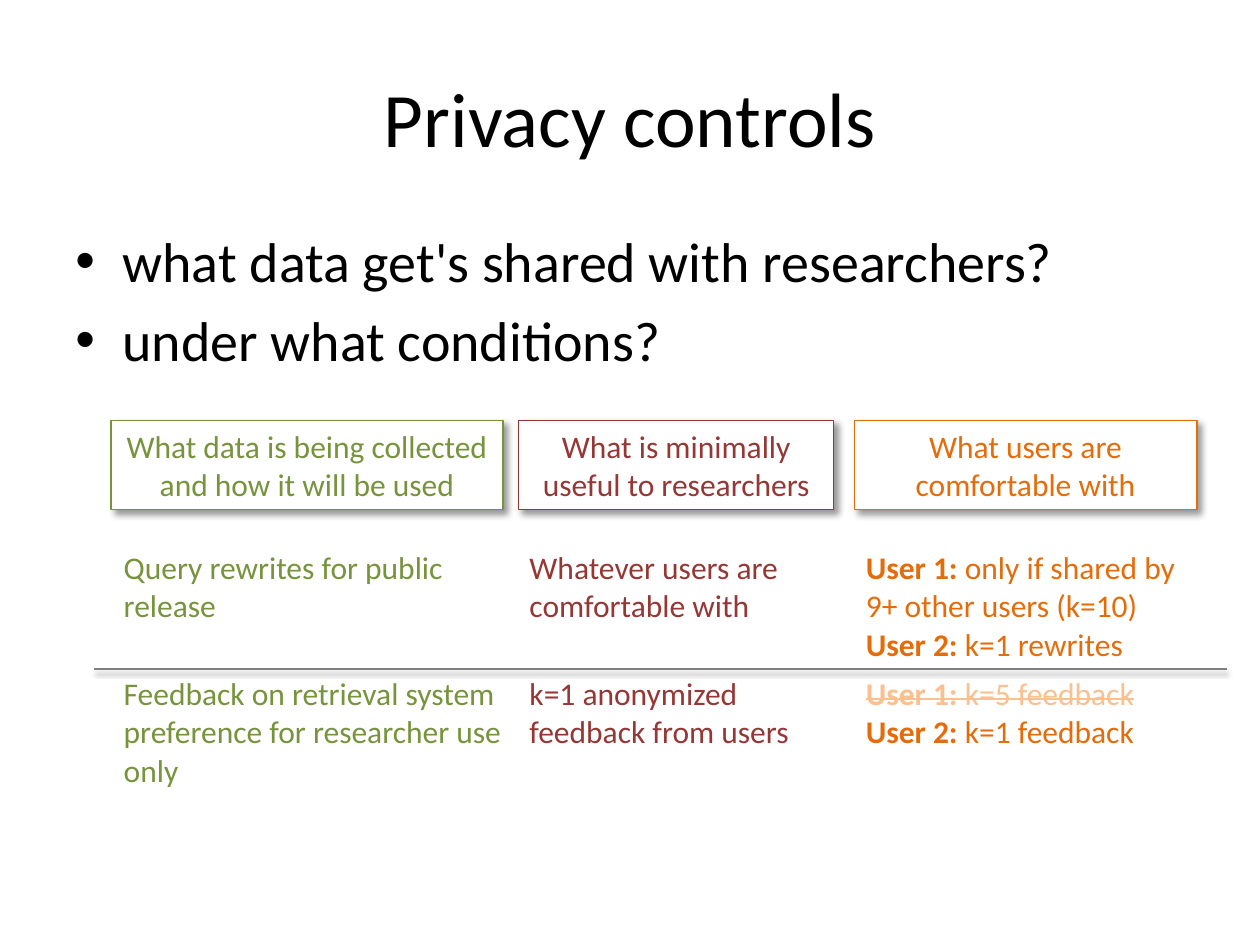
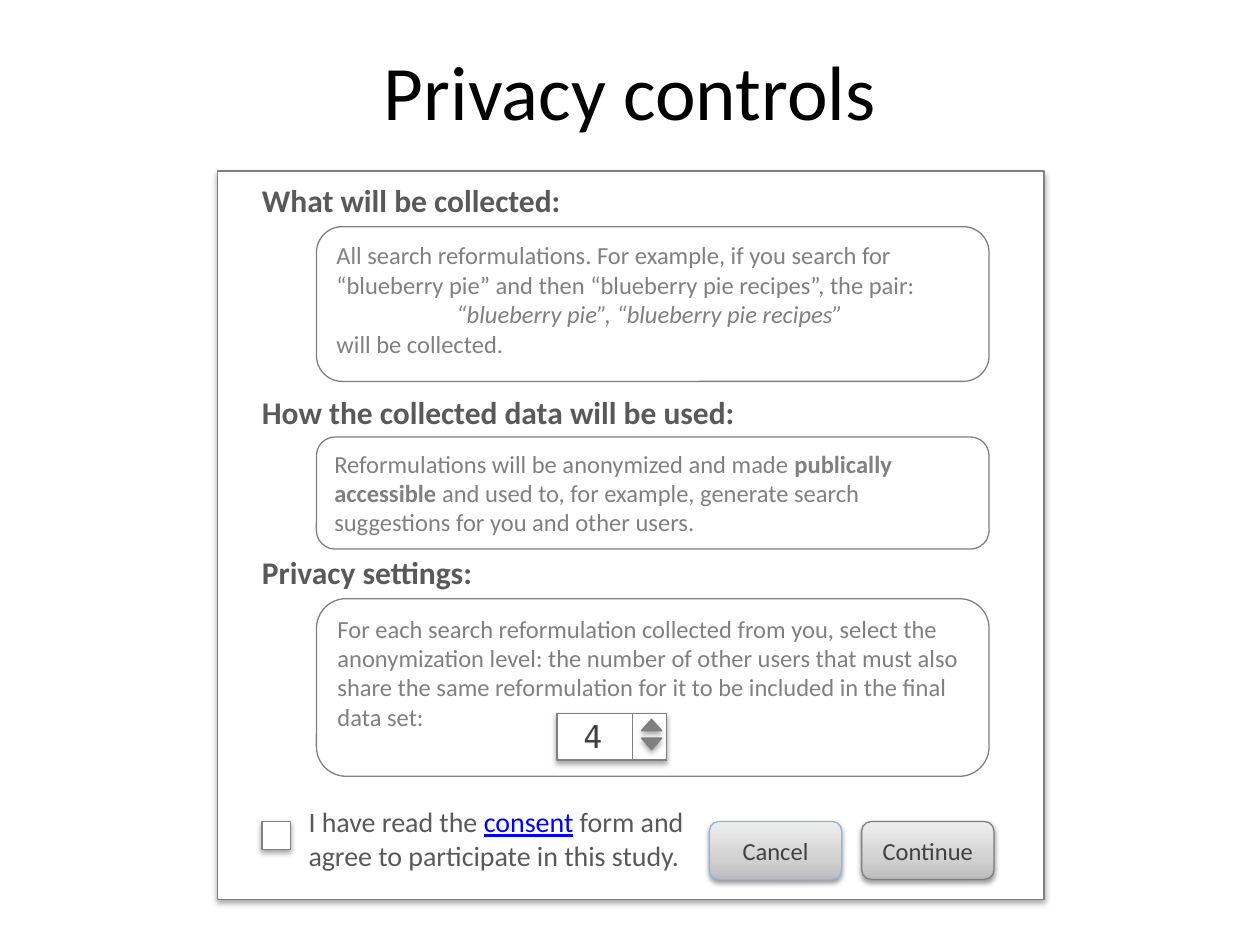
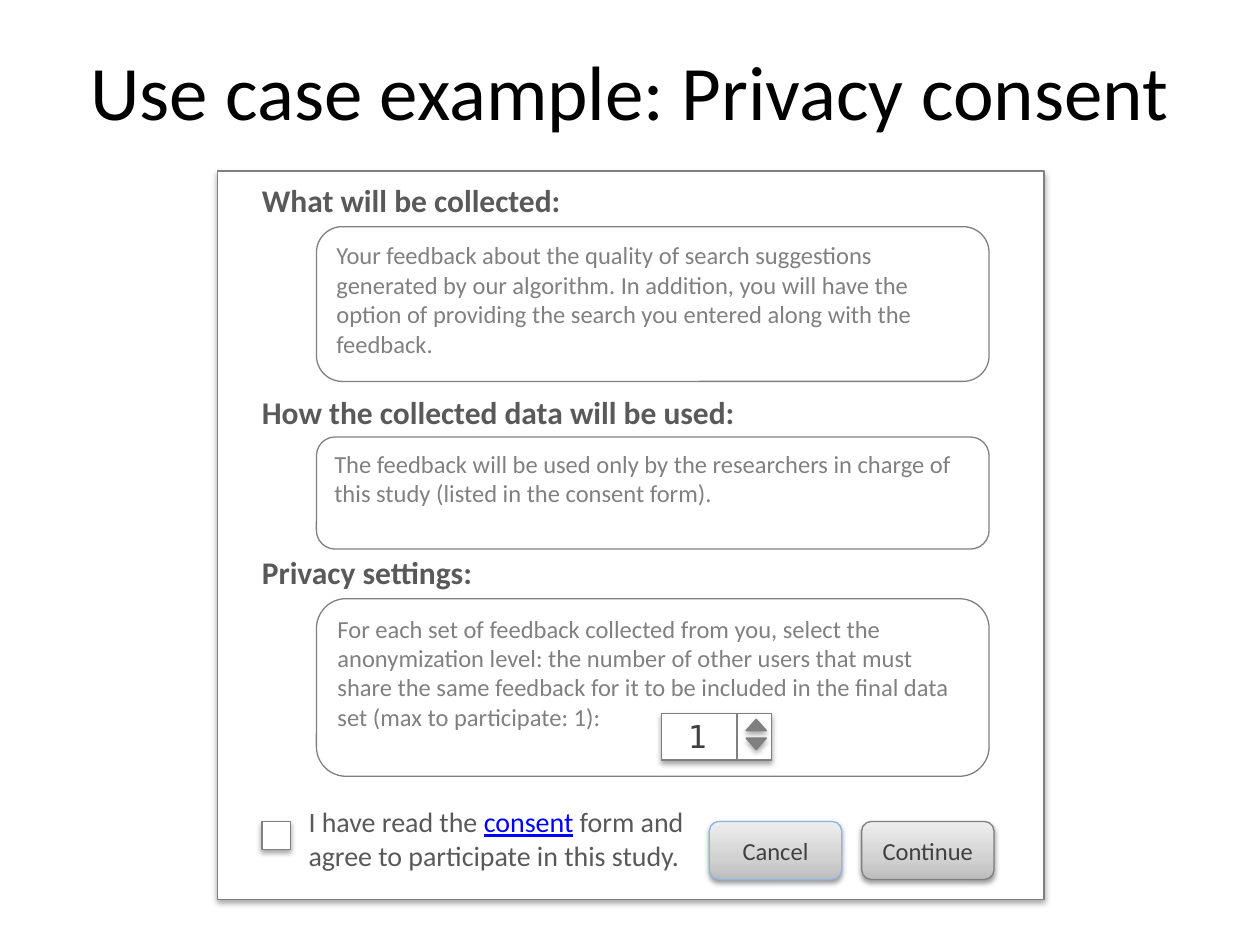
"""Build three slides on privacy controls and consent forms."""
from copy import deepcopy

from lxml.etree import SubElement
from pptx import Presentation
from pptx.dml.color import RGBColor
from pptx.enum.shapes import MSO_CONNECTOR, MSO_SHAPE
from pptx.enum.text import MSO_ANCHOR, PP_ALIGN
from pptx.oxml.ns import qn
from pptx.util import Cm, Pt

BLACK = RGBColor(0x00, 0x00, 0x00)
WHITE = RGBColor(0xFF, 0xFF, 0xFF)
GREEN = RGBColor(0x77, 0x93, 0x3C)
RED = RGBColor(0x95, 0x37, 0x35)
ORANGE = RGBColor(0xE4, 0x6C, 0x0A)
PEACH = RGBColor(0xFA, 0xC0, 0x90)
BLUE = RGBColor(0x00, 0x00, 0xFF)
SKY = RGBColor(0x8E, 0xB4, 0xE3)
INK = RGBColor(0x40, 0x40, 0x40)
DARK = RGBColor(0x59, 0x59, 0x59)
STEEL = RGBColor(0x7F, 0x7F, 0x7F)
GRAY = RGBColor(0x80, 0x80, 0x80)
STOPS = [(0, RGBColor(0xBD, 0xBD, 0xBD)), (0.35, RGBColor(0xD1, 0xD1, 0xD1)),
         (1, RGBColor(0xEE, 0xEE, 0xEE))]

CARD = (40, 4, 3, 45)
SOFT = (35, 3.1, 1.8, 90)
DROP = (38, 3.1, 1.6, 90)

MID = {"align": PP_ALIGN.CENTER}
BOLD = {"bold": True}
TITLE = {"size": Pt(44), "tint": BLACK, **MID}
POINT = {"size": Pt(32), "tint": BLACK}
LABEL = {"size": Pt(18), "tint": DARK, **BOLD}
NOTE = {"size": Pt(14), "tint": GRAY}
PRESS = {"size": Pt(14), "tint": INK, **MID}
COUNT = {"size": Pt(18), "tint": INK, "name": "DejaVu Sans Mono"}
AGREE = {"size": Pt(16), "tint": DARK}


def write(frame, rows, look, anchor=MSO_ANCHOR.TOP):
    frame.word_wrap = True
    frame.vertical_anchor = anchor
    for spot, row in enumerate(rows):
        para = frame.add_paragraph() if spot else frame.paragraphs[0]
        para.alignment = PP_ALIGN.LEFT
        for text, extra in row:
            run = para.add_run()
            run.text = text
            for name, value in {"name": "Calibri", **look, **extra}.items():
                if name == "tint":
                    run.font.color.rgb = value
                elif name == "align":
                    para.alignment = value
                elif name == "strike":
                    run._r.get_or_add_rPr().set("strike", value)
                else:
                    setattr(run.font, name, value)


def draw(page, kind, box, line, shade=None, fill=WHITE):
    left, top, width, height = map(Cm, box)
    if kind is MSO_CONNECTOR.STRAIGHT:
        item = page.shapes.add_connector(kind, left, top, left + width, top + height)
        item.line.width = Pt(1)
    else:
        item = page.shapes.add_shape(kind, left, top, width, height)
        item.fill.solid()
        item.fill.fore_color.rgb = fill
        item.line.width = Pt(0.75)
    item.line.color.rgb = line
    cast = SubElement(item._element.spPr, qn("a:effectLst"))
    if shade:
        alpha, blur, dist, turn = shade
        outer = SubElement(cast, qn("a:outerShdw"), blurRad=str(Pt(blur)),
                           dist=str(Pt(dist)), dir=str(turn * 60000), rotWithShape="0")
        tone = SubElement(outer, qn("a:srgbClr"), val=str(BLACK))
        SubElement(tone, qn("a:alpha"), val=str(alpha * 1000))
    return item


deck = Presentation()
deck.slide_width, deck.slide_height = Cm(25.4), Cm(19.05)
pages = []
for title, anchor in [("Privacy controls", MSO_ANCHOR.MIDDLE),
                      ("Privacy controls", MSO_ANCHOR.TOP),
                      ("Use case example: Privacy consent", MSO_ANCHOR.TOP)]:
    page = deck.slides.add_slide(deck.slide_layouts[6])
    head = page.shapes.add_textbox(Cm(1.27), Cm(0.76), Cm(22.86), Cm(3.18))
    write(head.text_frame, [[(title, {})]], TITLE, anchor)
    pages.append(page)

page = pages[0]
body = page.shapes.add_textbox(Cm(1.27), Cm(4.45), Cm(22.86), Cm(3.66)).text_frame
write(body, [[("what data get's shared with researchers?", {})],
             [("under what conditions?", {})]], POINT)
for para in body.paragraphs:
    para.space_before = Pt(6.4)
    form = para._p.get_or_add_pPr()
    form.set("marL", str(Cm(0.95)))
    form.set("indent", str(Cm(-0.95)))
    SubElement(form, qn("a:buFont"), typeface="Arial")
    SubElement(form, qn("a:buChar"), char="•")

for left, width, tint, text in [
        (17.22, 6.91, ORANGE, "What users are comfortable with"),
        (10.46, 6.35, RED, "What is minimally useful to researchers"),
        (2.24, 7.9, GREEN, "What data is being collected and how it will be used")]:
    card = draw(page, MSO_SHAPE.RECTANGLE, (left, 8.48, width, 1.8), tint, CARD)
    write(card.text_frame, [[(text, {})]], {"size": Pt(18), "tint": tint, **MID})

GONE = {"tint": PEACH, "strike": "sngStrike"}
cells = [
    [[[("Query rewrites for public release", {})]],
     [[("Whatever users are comfortable with", {})]],
     [[("User 1: ", BOLD), ("only if shared by 9+ other users (k=10)", {})],
      [("User 2: ", BOLD), ("k=1 rewrites", {})]]],
    [[[("Feedback on retrieval system preference for researcher use only", {})]],
     [[("k=1 anonymized feedback from users", {})]],
     [[("User 1: ", {**GONE, **BOLD}), ("k=5 feedback", GONE)],
      [("User 2: ", BOLD), ("k=1 feedback", {})]]]]
grid = page.shapes.add_table(2, 3, Cm(2.24), Cm(10.95), Cm(22.17), Cm(5.08)).table
grid.first_row = grid.horz_banding = False
for col, width in zip(grid.columns, (8.18, 6.78, 7.21)):
    col.width = Cm(width)
for y, row in enumerate(cells):
    for x, (rows, tint) in enumerate(zip(row, (GREEN, RED, ORANGE))):
        cell = grid.cell(y, x)
        cell.fill.background()
        write(cell.text_frame, rows, {"size": Pt(18), "tint": tint})
draw(page, MSO_CONNECTOR.STRAIGHT, (1.9, 13.49, 22.84, 0), STEEL, DROP)

heads = ["What will be collected:", "How the collected data will be used:",
         "Privacy settings:"]
places = [(3.53, 4.57, 3.12), (7.8, 8.81, 2.26), (11.02, 12.07, 3.58)]
forms = [
    ("4", 11.23, [
        [[("All search reformulations. For example, if you search for “blueberry pie” "
           "and then “blueberry pie recipes”, the pair:", {})],
         [("“blueberry pie”, “blueberry pie recipes” ", {"italic": True, **MID})],
         [("will be collected.", {})]],
        [[("Reformulations will be anonymized and made ", {}),
          ("publically accessible ", BOLD),
          ("and used to, for example, generate search suggestions for you and "
           "other users.", {})]],
        [[("For each search reformulation collected from you, select the "
           "anonymization level: the number of other users that must also share the "
           "same reformulation for it to be included in the final data set:", {})]]]),
    ("1", 13.34, [
        [[("Your feedback about the quality of search suggestions generated by our "
           "algorithm. In addition, you will have the option of providing the search "
           "you entered along with the feedback.", {})]],
        [[("The feedback will be used only by the researchers in charge of this study "
           "(listed in the consent form).", {})]],
        [[("For each set of feedback collected from you, select the anonymization "
           "level: the number of other users that must share the same feedback for it "
           "to be included in the final data set (max to participate: 1):", {})]]])]

for page, (count, left, notes) in zip(pages[1:], forms):
    draw(page, MSO_SHAPE.RECTANGLE, (4.39, 3.45, 16.66, 14.68), GRAY, SOFT)
    for text, rows, (high, top, tall) in zip(heads, notes, places):
        label = page.shapes.add_textbox(Cm(5.03), Cm(high), Cm(14.94), Cm(1.02))
        write(label.text_frame, [[(text, {})]], LABEL)
        note = draw(page, MSO_SHAPE.ROUNDED_RECTANGLE, (6.38, top, 13.56, tall), GRAY)
        write(note.text_frame, rows, NOTE)

    draw(page, MSO_SHAPE.RECTANGLE, (left, 14.38, 2.21, 0.94), GRAY, SOFT)
    draw(page, MSO_SHAPE.RECTANGLE, (left + 1.52, 14.38, 0.69, 0.94), GRAY)
    for top, turn in [(14.88, 180), (14.5, 0)]:
        arrow = draw(page, MSO_SHAPE.ISOSCELES_TRIANGLE, (left + 1.7, top, 0.41, 0.23),
                     STEEL, SOFT, GRAY)
        arrow.rotation = turn
    digit = page.shapes.add_textbox(Cm(left + 0.28), Cm(14.33), Cm(1.12), Cm(1.02))
    write(digit.text_frame, [[(count, {})]], COUNT)

    draw(page, MSO_SHAPE.RECTANGLE, (5.28, 16.56, 0.58, 0.56), GRAY, SOFT)
    agree = page.shapes.add_textbox(Cm(5.97), Cm(16.1), Cm(8.23), Cm(1.63))
    write(agree.text_frame, [[("I have read the ", {}),
                              ("consent", {"tint": BLUE, "underline": True}),
                              (" form and agree to participate in this study.", {})]], AGREE)
    for text, start, line in [("Cancel", 14.3, SKY), ("Continue", 17.37, STEEL)]:
        press = draw(page, MSO_SHAPE.ROUNDED_RECTANGLE, (start, 16.56, 2.67, 1.17), line, DROP)
        press.fill.gradient()
        press.fill.gradient_angle = 90
        ramp = press._element.spPr.find(".//" + qn("a:gsLst"))
        ramp.append(deepcopy(ramp[0]))
        for stop, (place, tint) in zip(press.fill.gradient_stops, STOPS):
            stop.position = place
            stop.color.rgb = tint
        write(press.text_frame, [[(text, {})]], PRESS, MSO_ANCHOR.MIDDLE)

deck.save("out.pptx")
